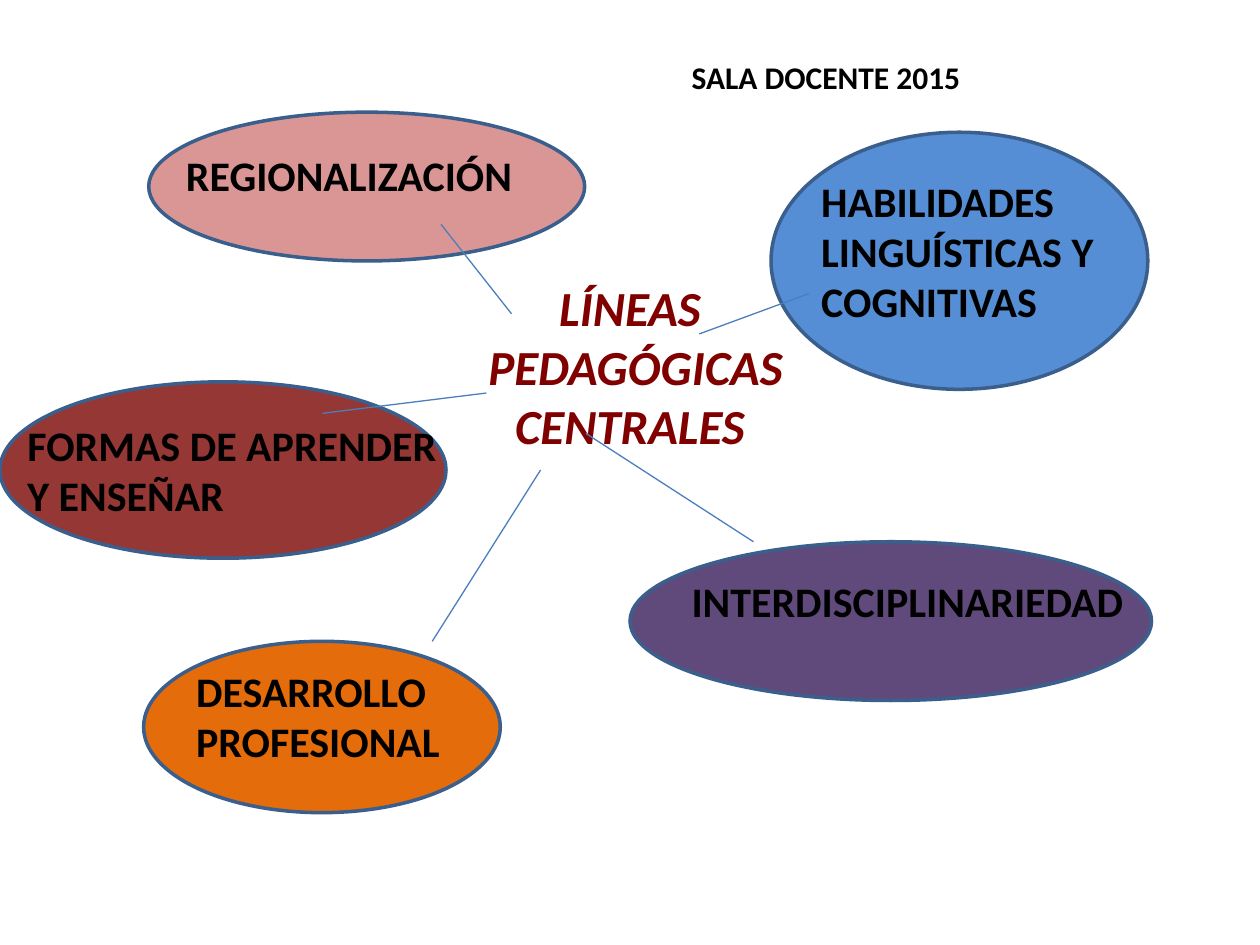
from lxml import etree
from pptx import Presentation
from pptx.dml.color import RGBColor
from pptx.enum import shapes, text
from pptx.oxml import ns
from pptx.util import Pt

FONT = "Calibri"
COLORS = {
    "purple": "604A7B",
    "blue": "558ED5",
    "pink": "D99694",
    "red": "953735",
    "orange": "E46C0A",
    "outline": "3A5F8C",
    "connector": "4B7EBC",
    "title": "800000",
    "label": "000000",
}

# Left, top, width, height
ELLIPSES = [
    ("purple", (360, 309.6, 298, 90.7)),
    ("blue", (440.6, 75.6, 215.3, 146.9)),
    ("pink", (85, 64.1, 249.1, 85)),
    ("red", (0, 218.2, 254.9, 100.8)),
    ("orange", (82.1, 366.5, 203.8, 97.9)),
]
LABELS = [
    ("REGIONALIZACIÓN", (99.2, 82.1, 255, 36), 24),
    ("DESARROLLO PROFESIONAL", (105, 376.6, 255, 65.5), 24),
    ("HABILIDADES LINGUÍSTICAS Y COGNITIVAS", (462.2, 96.5, 204, 94.3), 24),
    ("FORMAS DE APRENDER Y ENSEÑAR", (8.6, 236.2, 255, 65.5), 24),
    ("INTERDISCIPLINARIEDAD", (388.1, 325.4, 268, 36), 24),
    ("SALA DOCENTE 2015", (388.1, 29.5, 255, 28.8), 18),
]
# Start x, start y, end x, end y
CONNECTORS = [
    (292.3, 179.3, 252, 128.2),
    (308.9, 268.6, 247, 366.5),
    (399.6, 190.8, 462.2, 167.8),
    (334.8, 247.7, 430.6, 309.6),
    (277.9, 224.6, 184.3, 236.2),
]


def color(name):
    return RGBColor.from_string(COLORS[name])


def points(values):
    return [Pt(value) for value in values]


def add_ellipse(slide, fill, box):
    shape = slide.shapes.add_shape(shapes.MSO_SHAPE.OVAL, *points(box))
    shape.shadow.inherit = False
    shape.fill.solid()
    shape.fill.fore_color.rgb = color(fill)
    shape.line.color.rgb = color("outline")
    shape.line.width = Pt(2)


def add_text(slide, wording, box, size, color_name="label", italic=False):
    text_frame = slide.shapes.add_textbox(*points(box)).text_frame
    text_frame.word_wrap = True
    text_frame.text = wording
    for run in text_frame.paragraphs[0].runs:
        run.font.name = FONT
        run.font.size = Pt(size)
        run.font.bold = True
        run.font.italic = italic
        run.font.color.rgb = color(color_name)
    return text_frame


def add_title(slide):
    text_frame = add_text(slide, "LÍNEAS\v PEDAGÓGICAS\vCENTRALES",
                          (54, 151.2, 612, 115.9), 28, "title", italic=True)
    text_frame.margin_left = text_frame.margin_right = 0
    text_frame.margin_top = text_frame.margin_bottom = 0
    text_frame.vertical_anchor = text.MSO_ANCHOR.MIDDLE
    text_frame.paragraphs[0].alignment = text.PP_ALIGN.CENTER


def add_line(slide, ends):
    connector = slide.shapes.add_connector(
        shapes.MSO_CONNECTOR.STRAIGHT, *points(ends))
    connector.line.color.rgb = color("connector")
    connector.line.width = Pt(0.75)
    etree.SubElement(connector._element.spPr, ns.qn("a:effectLst"))


def main():
    presentation = Presentation()
    presentation.slide_width, presentation.slide_height = Pt(720), Pt(540)
    slide = presentation.slides.add_slide(presentation.slide_layouts[6])
    for fill, box in ELLIPSES:
        add_ellipse(slide, fill, box)
    add_title(slide)
    for wording, box, size in LABELS:
        add_text(slide, wording, box, size)
    for ends in CONNECTORS:
        add_line(slide, ends)
    presentation.save("out.pptx")


if __name__ == "__main__":
    main()
